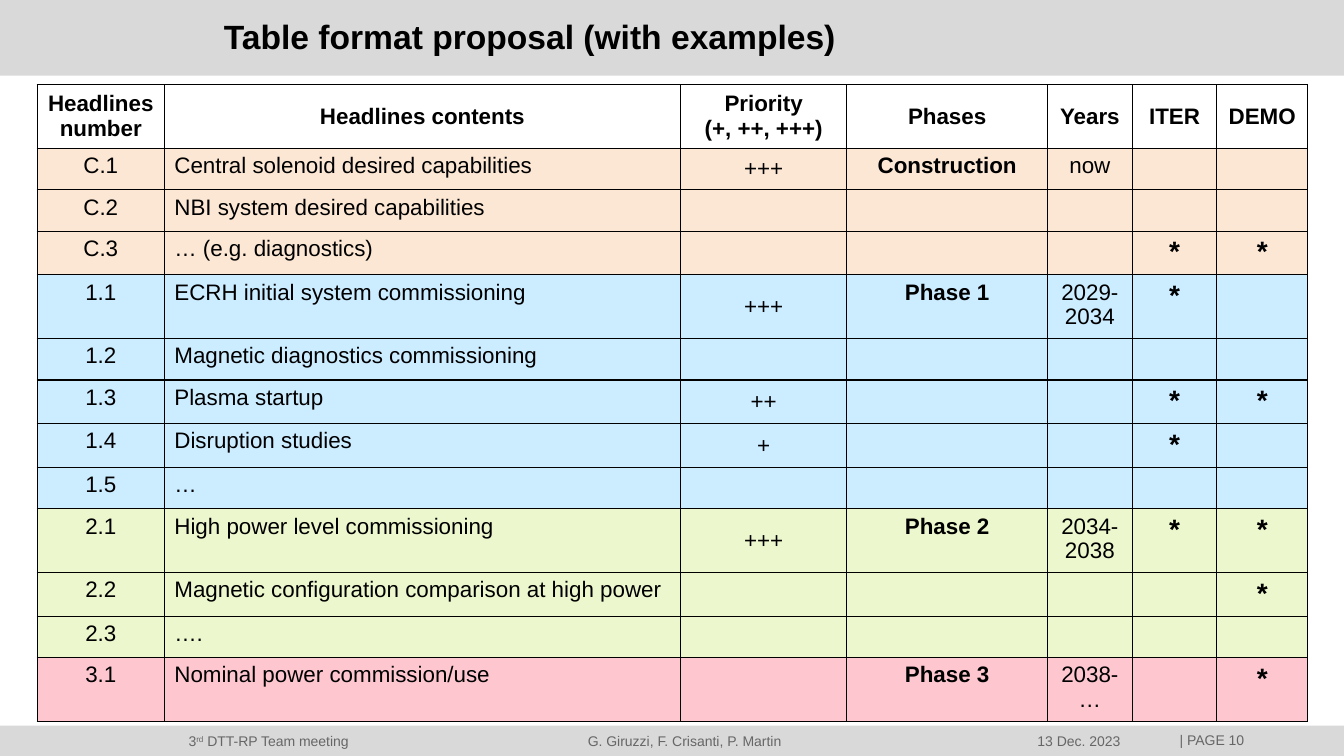
from dataclasses import dataclass

from lxml import etree
from pptx import Presentation
from pptx.dml.color import RGBColor
from pptx.enum.shapes import MSO_SHAPE
from pptx.enum.text import MSO_ANCHOR, PP_ALIGN
from pptx.oxml.ns import qn
from pptx.util import Inches, Pt

RECT = MSO_SHAPE.RECTANGLE
TOP, MIDDLE = MSO_ANCHOR.TOP, MSO_ANCHOR.MIDDLE
LEFT, CENTER = PP_ALIGN.LEFT, PP_ALIGN.CENTER

BLACK = RGBColor(0x00, 0x00, 0x00)
WHITE = RGBColor(0xFF, 0xFF, 0xFF)
BAR_GREY = RGBColor(0xD9, 0xD9, 0xD9)
TEXT_GREY = RGBColor(0x66, 0x66, 0x66)
PEACH = RGBColor(0xFC, 0xE7, 0xD4)
BLUE = RGBColor(0xCC, 0xEC, 0xFF)
GREEN = RGBColor(0xEC, 0xF7, 0xCE)
PINK = RGBColor(0xFE, 0xC7, 0xD0)

FONT = "Arial"
ROW_H, TALL_ROW_H = 0.41, 0.59
COL_WIDTHS = (1.26, 5.12, 1.65, 1.99, 0.84, 0.84, 0.9)
HEADERS = ("Headlines\nnumber", "Headlines contents", "Priority\n(+, ++, +++)",
           "Phases", "Years", "ITER", "DEMO")
CONTENTS_COL, PRIORITY_COL, PHASE_COL = 1, 2, 3
FOOTER_TABS = (3.96, 8.42)


@dataclass
class Headline:
    number: str
    contents: str
    priority: str = ""
    phase: str = ""
    years: str = ""
    iter_mark: str = ""
    demo_mark: str = ""

    def values(self) -> tuple[str, ...]:
        return (self.number, self.contents, self.priority, self.phase,
                self.years, self.iter_mark, self.demo_mark)


@dataclass
class Group:
    fill: RGBColor
    headlines: list[Headline]


GROUPS = [
    Group(PEACH, [
        Headline("C.1", "Central solenoid desired capabilities", "+++",
                 "Construction", "now"),
        Headline("C.2", "NBI system desired capabilities"),
        Headline("C.3", "… (e.g. diagnostics)", iter_mark="*", demo_mark="*"),
    ]),
    Group(BLUE, [
        Headline("1.1", "ECRH initial system commissioning", "+++",
                 "Phase 1", "2029-2034", "*"),
        Headline("1.2", "Magnetic diagnostics commissioning"),
        Headline("1.3", "Plasma startup", "++", iter_mark="*", demo_mark="*"),
        Headline("1.4", "Disruption studies", "+", iter_mark="*"),
        Headline("1.5", "…"),
    ]),
    Group(GREEN, [
        Headline("2.1", "High power level commissioning", "+++",
                 "Phase 2", "2034-2038", "*", "*"),
        Headline("2.2", "Magnetic configuration comparison at high power",
                 demo_mark="*"),
        Headline("2.3", "…."),
    ]),
    Group(PINK, [
        Headline("3.1", "Nominal power commission/use", "",
                 "Phase 3", "2038-…", "", "*"),
    ]),
]


def add_run(p, text: str, size: float, color: RGBColor, bold: bool = False):
    r = p.add_run()
    r.text = text
    r.font.name = FONT
    r.font.size = Pt(size)
    r.font.bold = bold
    r.font.color.rgb = color
    return r


def add_bar(s, top: float, height: float) -> None:
    sp = s.shapes.add_shape(RECT, 0, Inches(top), prs.slide_width, Inches(height))
    sp.shadow.inherit = False
    sp.fill.solid()
    sp.fill.fore_color.rgb = BAR_GREY
    sp.line.fill.background()


def add_text_box(s, left: float, top: float, width: float, height: float):
    sp = s.shapes.add_textbox(Inches(left), Inches(top), Inches(width), Inches(height))
    tf = sp.text_frame
    tf.word_wrap = True
    tf.vertical_anchor = MIDDLE
    tf.margin_left = tf.margin_right = tf.margin_top = tf.margin_bottom = 0
    return tf.paragraphs[0]


def add_tab_stops(p, stops: tuple[float, ...]) -> None:
    tabs = etree.SubElement(p._p.get_or_add_pPr(), qn("a:tabLst"))
    for stop in stops:
        etree.SubElement(tabs, qn("a:tab"), pos=str(Inches(stop)), algn="l")


def set_borders(cell) -> None:
    tcPr = cell._tc.get_or_add_tcPr()
    for i, side in enumerate(("a:lnL", "a:lnR", "a:lnT", "a:lnB")):
        ln = etree.Element(qn(side), w=str(Pt(1)))
        fill = etree.SubElement(ln, qn("a:solidFill"))
        etree.SubElement(fill, qn("a:srgbClr"), val=str(BLACK))
        tcPr.insert(i, ln)


def fill_cell(cell, text: str, fill: RGBColor, align=CENTER, anchor=TOP,
              bold: bool = False) -> None:
    cell.fill.solid()
    cell.fill.fore_color.rgb = fill
    cell.vertical_anchor = anchor
    set_borders(cell)
    if not text:
        return
    tf = cell.text_frame
    for i, line in enumerate(text.split("\n")):
        p = tf.add_paragraph() if i else tf.paragraphs[0]
        p.alignment = align
        star = line == "*"
        add_run(p, line, 20 if star else 16, BLACK, bold or star)


def add_headlines_table(s) -> None:
    rows = [(h, g.fill) for g in GROUPS for h in g.headlines]
    heights = [TALL_ROW_H] + [TALL_ROW_H if "-" in h.years else ROW_H for h, _ in rows]
    frame = s.shapes.add_table(len(heights), len(COL_WIDTHS), Inches(0.37), Inches(0.84),
                               Inches(sum(COL_WIDTHS)), Inches(sum(heights)))
    table = frame.table
    table.first_row = table.horz_banding = False
    for col, width in zip(table.columns, COL_WIDTHS):
        col.width = Inches(width)
    for row, height in zip(table.rows, heights):
        row.height = Inches(height)
    for c, header in enumerate(HEADERS):
        fill_cell(table.cell(0, c), header, WHITE, anchor=MIDDLE, bold=True)
    for i, (headline, fill) in enumerate(rows, 1):
        for c, value in enumerate(headline.values()):
            fill_cell(table.cell(i, c), value, fill,
                      LEFT if c == CONTENTS_COL else CENTER,
                      MIDDLE if c == PRIORITY_COL else TOP,
                      c == PHASE_COL)


prs = Presentation()
prs.slide_width, prs.slide_height = Inches(13.33), Inches(7.5)
s = prs.slides.add_slide(prs.slide_layouts[6])

add_bar(s, 7.2, 0.3)
add_bar(s, 0, 0.75)

p = add_text_box(s, 1.87, 7.15, 9.7, 0.4)
add_tab_stops(p, FOOTER_TABS)
add_run(p, "3", 10, TEXT_GREY)
r = add_run(p, "rd", 10, TEXT_GREY)
r._r.get_or_add_rPr().set("baseline", "30000")
add_run(p, " DTT-RP Team meeting\tG. Giruzzi, F. Crisanti, P. Martin\t13 Dec. 2023",
        10, TEXT_GREY)

p = add_text_box(s, 11.7, 7.14, 1.63, 0.4)
add_run(p, "| PAGE 10", 10, TEXT_GREY)

p = add_text_box(s, 2.22, 0.04, 9.82, 0.64)
add_run(p, "Table format proposal (with examples)", 24, BLACK, True)

add_headlines_table(s)
prs.save("out.pptx")
